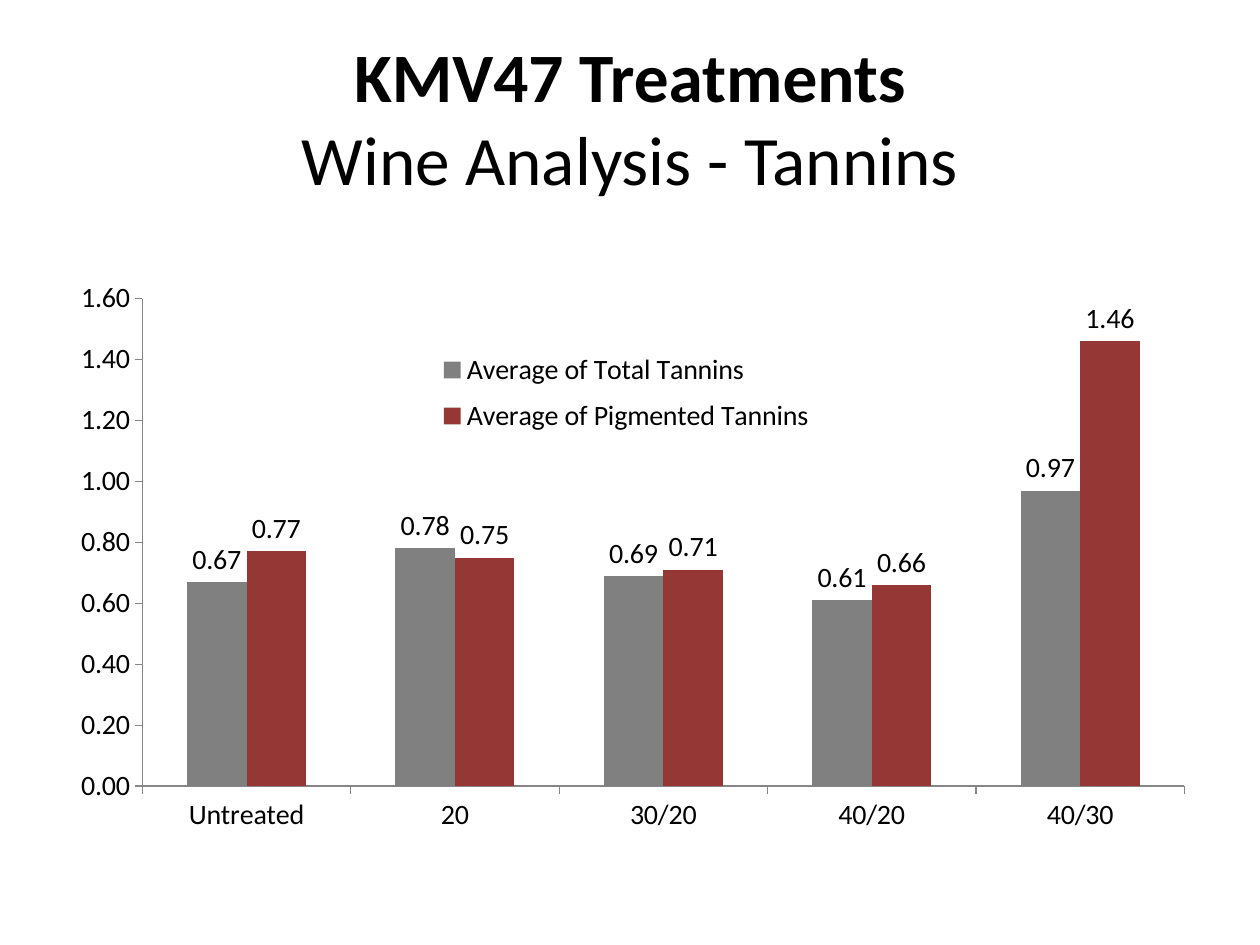
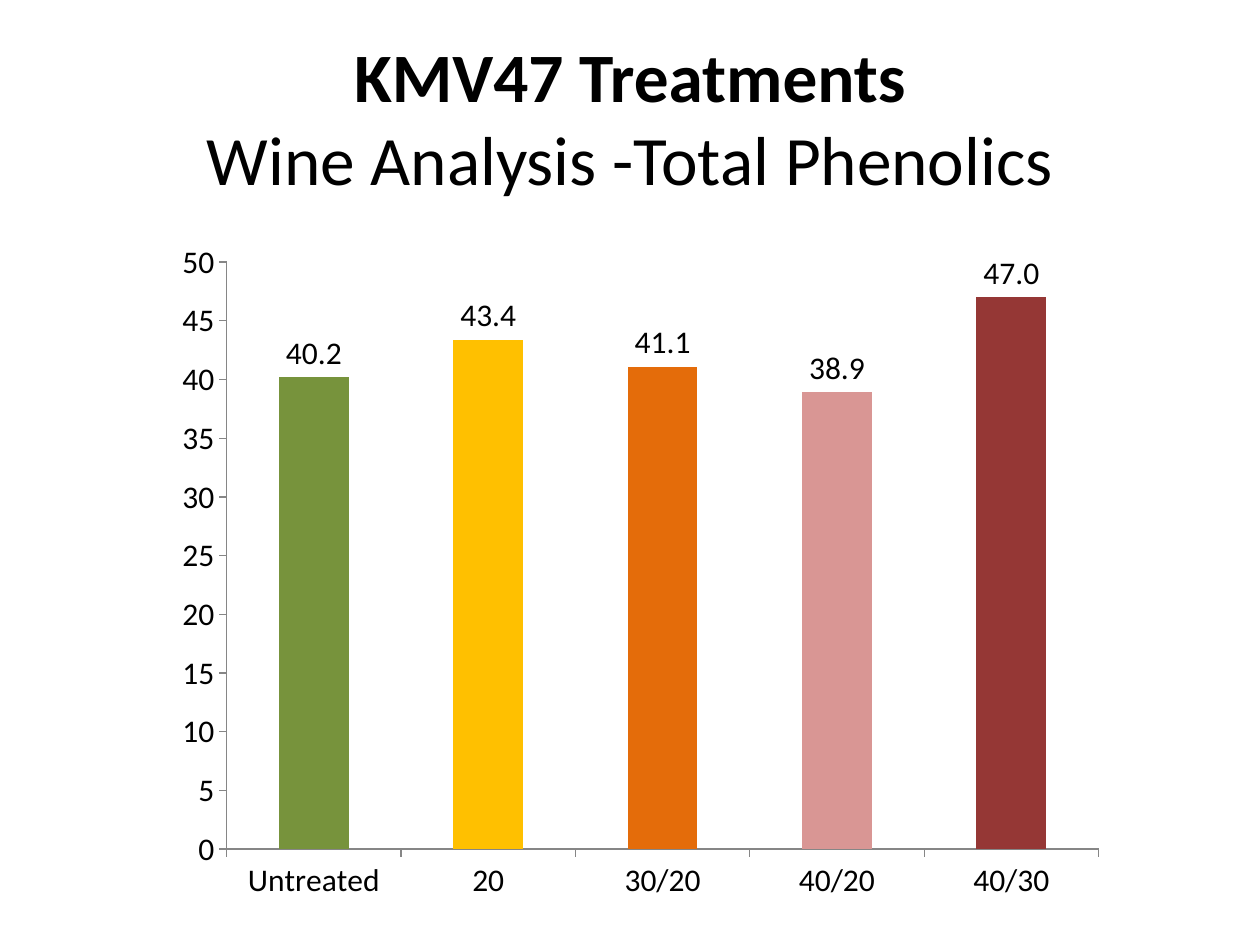
import pptx
import pptx.util
import pptx.chart.data
import pptx.enum.chart
import pptx.enum.text
import pptx.dml.color
import pptx.oxml
import pptx.oxml.ns

Inch, Pt = pptx.util.Inches, pptx.util.Pt
qn = pptx.oxml.ns.qn
enum = pptx.enum.chart
hues = {
    "ink": "000000", "axis": "868686", "gray": "808080", "wine": "953735",
    "green": "77933C", "gold": "FFC000", "orange": "E46C0A", "pink": "D99694",
}
cats = ["Untreated", "20", "30/20", "40/20", "40/30"]
pages = [
    {
        "topic": "Wine Analysis - Tannins",
        "box": (0.5, 1.75, 9, 4.95), "plot": (0.63, 0.62, 8.27, 3.87),
        "size": 16, "top": 1.6, "step": 0.2, "ticks": "0.00", "marks": "0.00",
        "series": [
            ("Average of Total Tannins", [0.67, 0.78, 0.69, 0.61, 0.97], "gray"),
            ("Average of Pigmented Tannins", [0.77, 0.75, 0.71, 0.66, 1.46], "wine"),
        ],
        "bars": [], "key": (2.87, 0.96, 3.2, 0.82),
    },
    {
        "topic": "Wine Analysis -Total Phenolics",
        "box": (1.3, 1.39, 7.48, 5.83), "plot": (0.5, 0.69, 6.92, 4.66),
        "size": 18, "top": 50, "step": 5, "ticks": "0", "marks": "0.0",
        "series": [("Series 1", [40.2, 43.4, 41.1, 38.9, 47.0], "green")],
        "bars": ["green", "gold", "orange", "pink", "wine"], "key": None,
    },
]


def rgb(name):
    return pptx.dml.color.RGBColor.from_string(hues[name])


def place(node, area, box, inner=False):
    for old in node.getparent().findall(qn("c:layout")):
        node.getparent().remove(old)
    rows = '<c:layoutTarget val="inner"/>' if inner else ""
    rows += "".join(f'<c:{side}Mode val="edge"/>' for side in "xy")
    rows += "".join(
        f'<c:{side} val="{part / full:.4f}"/>' for side, part, full in zip("xywh", area, box[2:] * 2))
    node.addprevious(pptx.oxml.parse_xml(
        f'<c:layout {pptx.oxml.ns.nsdecls("c")}><c:manualLayout>{rows}</c:manualLayout></c:layout>'))


deck = pptx.Presentation()
deck.slide_width, deck.slide_height = Inch(10), Inch(7.5)

for page in pages:
    slide = deck.slides.add_slide(deck.slide_layouts[5])
    title = slide.shapes.title
    spot = {"left": 0.5, "top": 0.3, "width": 9, "height": 1.25}
    for name, size in spot.items():
        setattr(title, name, Inch(size))
    frame = title.text_frame
    frame.word_wrap = True
    frame.vertical_anchor = pptx.enum.text.MSO_ANCHOR.MIDDLE
    para = frame.paragraphs[0]
    para.alignment = pptx.enum.text.PP_ALIGN.CENTER
    for text, bold in (("KMV47 Treatments", True), (page["topic"], False)):
        if not bold:
            para.add_line_break()
        run = para.add_run()
        run.text = text
        for name, value in {"name": "Calibri", "size": Pt(39.6), "bold": bold}.items():
            setattr(run.font, name, value)
        run.font.color.rgb = rgb("ink")

    data = pptx.chart.data.CategoryChartData()
    data.categories = cats
    for name, vals, hue in page["series"]:
        data.add_series(name, vals)
    chart = slide.shapes.add_chart(
        enum.XL_CHART_TYPE.COLUMN_CLUSTERED, *map(Inch, page["box"]), data).chart
    chart.has_title = False
    chart.font.name, chart.font.size = "Calibri", Pt(page["size"])
    chart.font.color.rgb = rgb("ink")

    plot = chart.plots[0]
    style = {"gap_width": 150, "overlap": 0, "vary_by_categories": False, "has_data_labels": True}
    for name, value in style.items():
        setattr(plot, name, value)
    style = {
        "show_value": True, "number_format": page["marks"], "number_format_is_linked": False,
        "position": enum.XL_LABEL_POSITION.OUTSIDE_END,
    }
    for name, value in style.items():
        setattr(plot.data_labels, name, value)
    place(plot._element, page["plot"], page["box"], True)

    for axis in (chart.category_axis, chart.value_axis):
        axis.has_major_gridlines = False
        axis.major_tick_mark = enum.XL_TICK_MARK.OUTSIDE
        axis.minor_tick_mark = enum.XL_TICK_MARK.NONE
        axis.format.line.color.rgb = rgb("axis")
        axis.format.line.width = Pt(0.75)
    scale = {"minimum_scale": 0, "maximum_scale": page["top"], "major_unit": page["step"]}
    for name, value in scale.items():
        setattr(chart.value_axis, name, value)
    ticks = chart.value_axis.tick_labels
    ticks.number_format, ticks.number_format_is_linked = page["ticks"], False

    fills = [(row.format.fill, hue) for row, (_, _, hue) in zip(plot.series, page["series"])]
    fills += [(plot.series[0].points[i].format.fill, hue) for i, hue in enumerate(page["bars"])]
    for fill, hue in fills:
        fill.solid()
        fill.fore_color.rgb = rgb(hue)

    chart.has_legend = page["key"] is not None
    if chart.has_legend:
        chart.legend.position = enum.XL_LEGEND_POSITION.RIGHT
        chart.legend.include_in_layout = False
        place(chart.legend._element.find(qn("c:overlay")), page["key"], page["box"])

deck.save("out.pptx")
